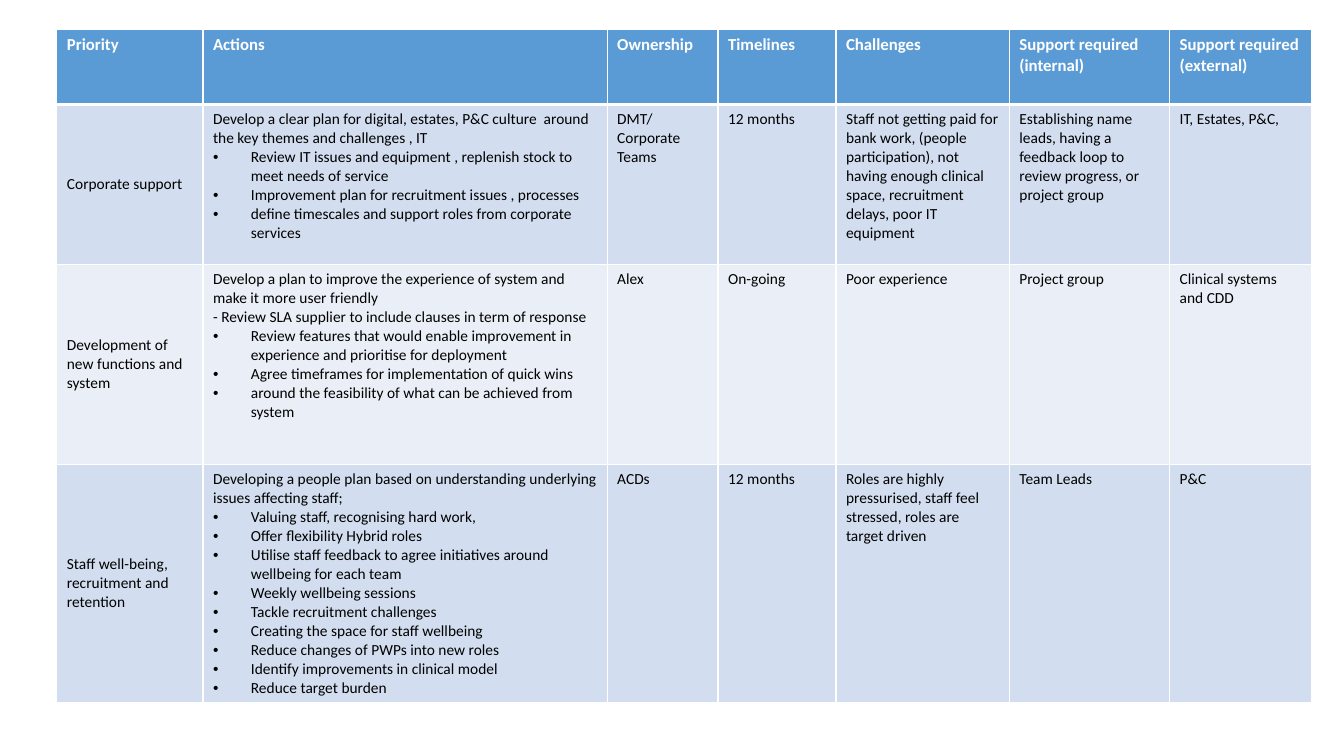
from lxml import etree
from pptx import Presentation
from pptx.dml.color import RGBColor
from pptx.enum import text
from pptx.oxml import ns
from pptx.util import Pt

WHITE, BLACK, BLUE = "FFFFFF", "000000", "5B9BD5"
BANDS = ["D2DEEF", "EAEFF7"]
WIDTHS = [104.4, 288.7, 79.2, 84.25, 123.85, 114.5, 101.5]
HEIGHTS = [53.3, 114.5, 142.5, 168.5]
HEAD = {"size": Pt(12), "bold": True, "name": "Calibri"}
BODY = {"size": Pt(11), "bold": False, "name": "Calibri"}

# Lines that start with "• " become bulleted paragraphs.
ROWS = [
    ["Priority", "Actions", "Ownership", "Timelines", "Challenges",
     "Support required (internal)", "Support required (external)"],
    ["Corporate support",
     """Develop a clear plan for digital, estates, P&C culture  around the key themes and challenges , IT
• Review IT issues and equipment , replenish stock to meet needs of service
• Improvement plan for recruitment issues , processes
• define timescales and support roles from corporate services""",
     "DMT/Corporate Teams", "12 months",
     "Staff not getting paid for bank work, (people participation), not having "
     "enough clinical space, recruitment delays, poor IT equipment",
     "Establishing name leads, having a feedback loop to review progress, or project group",
     "IT, Estates, P&C,"],
    ["Development of new functions and system",
     """Develop a plan to improve the experience of system and make it more user friendly
- Review SLA supplier to include clauses in term of response
• Review features that would enable improvement in experience and prioritise for deployment
• Agree timeframes for implementation of quick wins
• around the feasibility of what can be achieved from system""",
     "Alex", "On-going", "Poor experience", "Project group",
     "Clinical systems and CDD"],
    ["Staff well-being, recruitment and retention",
     """Developing a people plan based on understanding underlying issues affecting staff;
• Valuing staff, recognising hard work,
• Offer flexibility Hybrid roles
• Utilise staff feedback to agree initiatives around wellbeing for each team
• Weekly wellbeing sessions
• Tackle recruitment challenges
• Creating the space for staff wellbeing
• Reduce changes of PWPs into new roles
• Identify improvements in clinical model
• Reduce target burden""",
     "ACDs", "12 months",
     "Roles are highly pressurised, staff feel stressed, roles are target driven",
     "Team Leads", "P&C"],
]


def rgb(code):
    return RGBColor.from_string(code)


def add_bullet(para):
    props = para._p.get_or_add_pPr()
    props.set("marL", str(Pt(27)))
    props.set("indent", str(Pt(-27)))
    font = etree.SubElement(props, ns.qn("a:buFont"))
    font.set("typeface", "Arial")
    etree.SubElement(props, ns.qn("a:buChar")).set("char", "•")


def add_edges(cell, base):
    """Draw white cell borders, the bottom one base points wide."""
    props = cell._tc.get_or_add_tcPr()
    for side, width in {"L": 1, "R": 1, "T": 1, "B": base}.items():
        line = etree.SubElement(props, ns.qn("a:ln" + side))
        line.set("w", str(Pt(width)))
        fill = etree.SubElement(line, ns.qn("a:solidFill"))
        etree.SubElement(fill, ns.qn("a:srgbClr")).set("val", WHITE)


def write(frame, words, style, color):
    for i, line in enumerate(words.split("\n")):
        para = frame.paragraphs[0] if i == 0 else frame.add_paragraph()
        if line.startswith("• "):
            add_bullet(para)
        run = para.add_run()
        run.text = line.removeprefix("• ")
        for key, value in style.items():
            setattr(run.font, key, value)
        run.font.color.rgb = rgb(color)


def fill_cell(cell, words, row, col):
    head = row == 0
    add_edges(cell, 3 if head else 1)
    cell.fill.solid()
    cell.fill.fore_color.rgb = rgb(BLUE if head else BANDS[(row - 1) % 2])
    middle = col == 0 and not head
    anchor = text.MSO_ANCHOR
    cell.vertical_anchor = anchor.MIDDLE if middle else anchor.TOP
    write(cell.text_frame, words, HEAD if head else BODY, WHITE if head else BLACK)


def add_plan(slide):
    """Add the table of priorities and actions."""
    frame = slide.shapes.add_table(len(ROWS), len(WIDTHS), Pt(40.6), Pt(21.3),
                                   Pt(sum(WIDTHS)), Pt(sum(HEIGHTS)))
    table = frame.table
    table.horz_banding = False
    for col, width in zip(table.columns, WIDTHS):
        col.width = Pt(width)
    for row, height in zip(table.rows, HEIGHTS):
        row.height = Pt(height)
    for r, row in enumerate(ROWS):
        for c, words in enumerate(row):
            fill_cell(table.cell(r, c), words, r, c)


def main():
    deck = Presentation()
    deck.slide_width, deck.slide_height = Pt(960), Pt(540)
    add_plan(deck.slides.add_slide(deck.slide_layouts[6]))
    deck.save("out.pptx")


if __name__ == "__main__":
    main()
